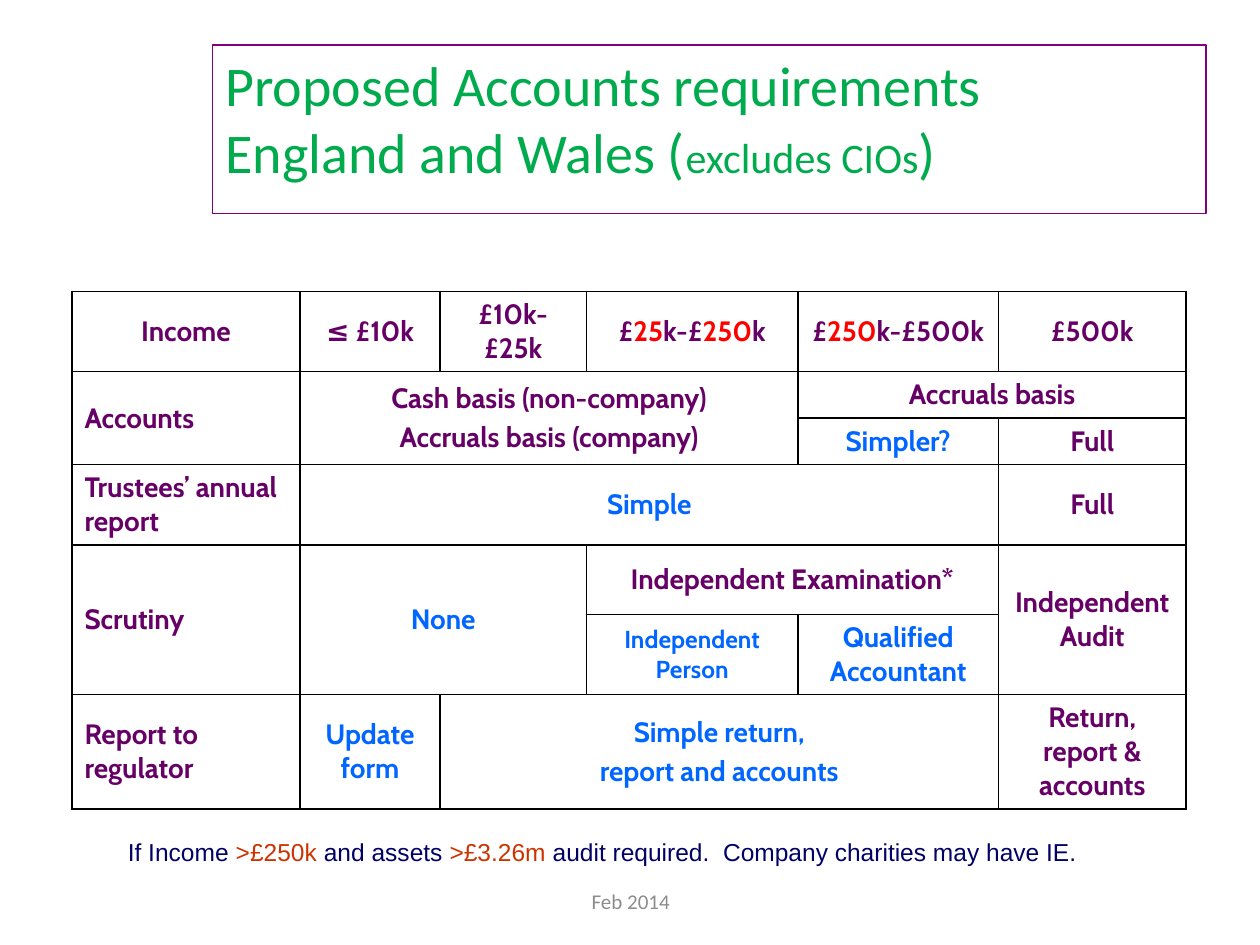
from dataclasses import dataclass
from lxml.etree import SubElement
from pptx import Presentation
from pptx.dml.color import RGBColor as Rgb
from pptx.enum.text import MSO_ANCHOR as Anchor, MSO_AUTO_SIZE as AutoSize, PP_ALIGN as Align
from pptx.oxml.ns import qn
from pptx.util import Cm, Pt


@dataclass(frozen=True)
class Theme:
    purple: str = "660066"
    blue: str = "0066FF"
    red: str = "FF0000"
    green: str = "00AB4E"
    frame: str = "800080"
    navy: str = "000066"
    rust: str = "CC3300"
    grey: str = "8C8C8C"
    border: str = "000000"
    table_font: str = "Cabin"
    title_font: str = "Calibri"
    note_font: str = "Arial"
    title_size: float = 32
    title_small: float = 24
    table_size: float = 16
    table_small: float = 14
    note_size: float = 14
    footer_size: float = 12
    paragraph_gap: float = 3.2


THEME = Theme()
PURPLE, BLUE, RED = THEME.purple, THEME.blue, THEME.red

TITLE_BOX = (4.29, 0.91, 20.02, 3.4)
TITLE_LINES = [
    [("Proposed Accounts requirements", THEME.title_size)],
    [("England and Wales (", THEME.title_size), ("excludes CIOs", THEME.title_small),
     (")", THEME.title_size)],
]

TABLE_LEFT, TABLE_TOP = 1.45, 4.93
COLUMN_WIDTHS = [4.6, 2.82, 2.95, 4.27, 4.04, 3.78]
ROW_HEIGHTS = [0.93, 1.61, 0.93, 0.93, 1.61, 1.4, 1.61, 2.29]

# row, column, rows spanned, columns spanned, colour, paragraphs
CELLS = [
    (1, 0, 1, 1, PURPLE, ["Income"]),
    (1, 1, 1, 1, PURPLE, ["≤ £10k"]),
    (1, 2, 1, 1, PURPLE, ["£10k-£25k"]),
    (1, 3, 1, 1, PURPLE, [[("£", PURPLE), ("25", RED), ("k-£", PURPLE), ("250", RED), ("k", PURPLE)]]),
    (1, 4, 1, 1, PURPLE, [[("£", PURPLE), ("250", RED), ("k-£500k", PURPLE)]]),
    (1, 5, 1, 1, PURPLE, ["£500k"]),
    (2, 0, 2, 1, PURPLE, ["Accounts"]),
    (2, 1, 2, 3, PURPLE, ["Cash basis (non-company)", "Accruals basis (company)"]),
    (2, 4, 1, 2, PURPLE, ["Accruals basis"]),
    (3, 4, 1, 1, BLUE, ["Simpler?"]),
    (3, 5, 1, 1, PURPLE, ["Full"]),
    (4, 0, 1, 1, PURPLE, ["Trustees’ annual report"]),
    (4, 1, 1, 4, BLUE, ["Simple"]),
    (4, 5, 1, 1, PURPLE, ["Full"]),
    (5, 0, 2, 1, PURPLE, ["Scrutiny"]),
    (5, 1, 2, 2, BLUE, ["None"]),
    (5, 3, 1, 2, PURPLE, ["Independent Examination*"]),
    (5, 5, 2, 1, PURPLE, ["Independent Audit"]),
    (6, 3, 1, 1, BLUE, ["Independent Person"]),
    (6, 4, 1, 1, BLUE, ["Qualified Accountant"]),
    (7, 0, 1, 1, PURPLE, ["Report to regulator"]),
    (7, 1, 1, 1, BLUE, ["Update form"]),
    (7, 2, 1, 3, BLUE, ["Simple return,", "report and accounts"]),
    (7, 5, 1, 1, PURPLE, ["Return, report & accounts"]),
]
SMALL_CELLS = {(6, 3)}

NOTE_BOX = (1.91, 16.74, 20.47, 0.86)
NOTE = [
    ("If Income ", THEME.navy), (">£250k", THEME.rust), (" and assets ", THEME.navy),
    (">£3.26m", THEME.rust), (" audit required.  Company charities may have IE.", THEME.navy),
]
FOOTER_BOX = (8.69, 17.65, 8.05, 1.02)
FOOTER = [("Feb 2014", THEME.grey)]


def add_run(paragraph, text, font, size, color, bold=False):
    run = paragraph.add_run()
    run.text = text
    run.font.name = font
    run.font.size = Pt(size)
    run.font.bold = bold
    run.font.color.rgb = Rgb.from_string(color)


def add_title(slide):
    title = slide.shapes.title
    title.left, title.top, title.width, title.height = map(Cm, TITLE_BOX)
    title.fill.background()
    title.line.color.rgb = Rgb.from_string(THEME.frame)
    title.line.width = Pt(0.75)
    frame = title.text_frame
    frame.word_wrap = True
    frame.auto_size = AutoSize.NONE
    frame.vertical_anchor = Anchor.TOP
    frame.margin_top = Cm(0.1)
    paragraph = frame.paragraphs[0]
    paragraph.alignment = Align.LEFT
    for index, line in enumerate(TITLE_LINES):
        if index:
            paragraph.add_line_break()
        for text, size in line:
            add_run(paragraph, text, THEME.title_font, size, THEME.green)


def set_borders(cell, visible):
    properties = cell._tc.get_or_add_tcPr()
    for side in ("L", "R", "T", "B"):
        line = SubElement(properties, qn(f"a:ln{side}"), w=str(Pt(1)))
        if side in visible:
            fill = SubElement(line, qn("a:solidFill"))
            SubElement(fill, qn("a:srgbClr"), val=THEME.border)
        else:
            SubElement(line, qn("a:noFill"))
    cell.fill.background()


def fill_cell(cell, paragraphs, color, size, alignment):
    cell.vertical_anchor = Anchor.MIDDLE
    frame = cell.text_frame
    for index, content in enumerate(paragraphs):
        paragraph = frame.add_paragraph() if index else frame.paragraphs[0]
        paragraph.alignment = alignment
        if index:
            paragraph.space_before = Pt(THEME.paragraph_gap)
        runs = [(content, color)] if isinstance(content, str) else content
        for text, run_color in runs:
            add_run(paragraph, text, THEME.table_font, size, run_color, bold=True)


def add_requirements_table(slide):
    table = slide.shapes.add_table(
        len(ROW_HEIGHTS), len(COLUMN_WIDTHS), Cm(TABLE_LEFT), Cm(TABLE_TOP),
        Cm(sum(COLUMN_WIDTHS)), Cm(sum(ROW_HEIGHTS))).table
    table.first_row = table.horz_banding = False
    for column, width in zip(table.columns, COLUMN_WIDTHS):
        column.width = Cm(width)
    for row_index, (row, height) in enumerate(zip(table.rows, ROW_HEIGHTS)):
        row.height = Cm(height)
        for cell in row.cells:
            set_borders(cell, "LRTB" if row_index else "B")
            SubElement(cell.text_frame.paragraphs[0]._p, qn("a:endParaRPr"),
                       sz=str(THEME.table_size * 100))
    table.cell(0, 0).merge(table.cell(0, len(COLUMN_WIDTHS) - 1))
    for row, column, row_span, column_span, color, paragraphs in CELLS:
        cell = table.cell(row, column)
        if row_span * column_span > 1:
            cell.merge(table.cell(row + row_span - 1, column + column_span - 1))
        size = THEME.table_small if (row, column) in SMALL_CELLS else THEME.table_size
        alignment = Align.LEFT if column == 0 and row > 1 else Align.CENTER
        fill_cell(cell, paragraphs, color, size, alignment)


def add_centred_text(slide, box, runs, font, size, anchor):
    frame = slide.shapes.add_textbox(*map(Cm, box)).text_frame
    frame.word_wrap = True
    frame.vertical_anchor = anchor
    paragraph = frame.paragraphs[0]
    paragraph.alignment = Align.CENTER
    for text, color in runs:
        add_run(paragraph, text, font, size, color)


def main():
    presentation = Presentation()
    presentation.slide_width, presentation.slide_height = Cm(25.4), Cm(19.05)
    slide = presentation.slides.add_slide(presentation.slide_layouts[5])
    add_title(slide)
    add_requirements_table(slide)
    add_centred_text(slide, NOTE_BOX, NOTE, THEME.note_font, THEME.note_size, Anchor.TOP)
    add_centred_text(slide, FOOTER_BOX, FOOTER, THEME.title_font, THEME.footer_size, Anchor.MIDDLE)
    presentation.save("out.pptx")


if __name__ == "__main__":
    main()
